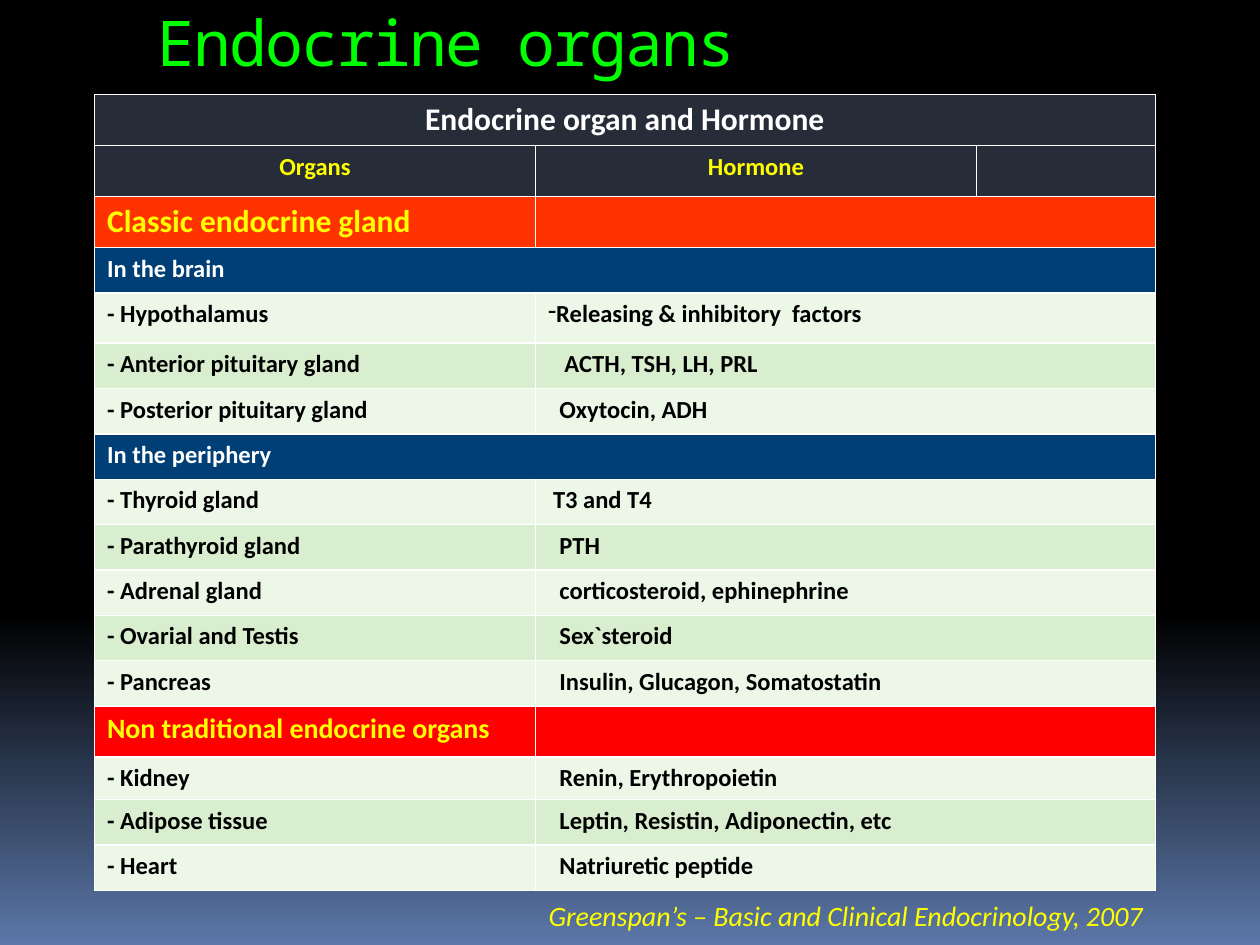
import pptx
import pptx.util
import pptx.dml.color
import pptx.enum.text
import lxml.etree

INK = {
    "black": "000000", "white": "FFFFFF", "lime": "00FF00", "gold": "FFFF00",
    "dusk": "5B77A8", "slate": "272D38", "flame": "FF3300", "red": "FF0000",
    "navy": "003F75", "pale": "ECF7E8", "mint": "D8EECE",
}
SIDE = {"l": pptx.enum.text.PP_ALIGN.LEFT, "c": pptx.enum.text.PP_ALIGN.CENTER,
        "r": pptx.enum.text.PP_ALIGN.RIGHT}
NS = "http://schemas.openxmlformats.org/drawingml/2006/main"
inch = pptx.util.Inches


def put(frame, text, size=14, ink="black", font="Calibri", bold=False,
        slant=False, side="l", pad=0.1, top=0.05, track=0, mark=None):
    frame.word_wrap = True
    frame.margin_left, frame.margin_top = inch(pad), inch(top)
    para = frame.paragraphs[0]
    para.alignment = SIDE[side]
    para.font.size = pptx.util.Pt(size)
    if mark:
        props = para._p.get_or_add_pPr()
        lxml.etree.SubElement(props, f"{{{NS}}}buChar", char=mark)
    if text:
        run = para.add_run()
        run.text = text
        face = run.font
        face.name, face.size = font, pptx.util.Pt(size)
        face.bold, face.italic = bold, slant
        face.color.rgb = pptx.dml.color.RGBColor.from_string(INK[ink])
        if track:
            run._r.get_or_add_rPr().set("spc", str(track * 100))


deck = pptx.Presentation()
W, H = inch(10), inch(7.5)
deck.slide_width, deck.slide_height = W, H
slide = deck.slides.add_slide(deck.slide_layouts[6])

fill = slide.background.fill
fill.gradient()
fill.gradient_angle = 270
stops = fill._fill._gradFill.gsLst
for stop in list(stops):
    stops.remove(stop)
for pos, ink in [(0, "black"), (65, "black"), (100, "dusk")]:
    stop = lxml.etree.SubElement(stops, f"{{{NS}}}gs", pos=str(pos * 1000))
    lxml.etree.SubElement(stop, f"{{{NS}}}srgbClr", val=INK[ink])

title = slide.shapes.add_textbox(int(W * 0.058), 0, int(W * 0.85), int(H * 0.07))
put(title.text_frame, "Endocrine organs", size=36, ink="lime",
    font="Noto Sans Mono", pad=0.67, top=0.03, track=-1)

KINDS = {
    "head": dict(fill="slate", size=18, ink="white", side="c", tall=0.405),
    "cols": dict(fill="slate", ink="gold", side="c", tall=0.405),
    "main": dict(fill="flame", size=18, ink="gold", tall=0.405),
    "next": dict(fill="red", size=16, ink="gold", tall=0.405),
    "part": dict(fill="navy", ink="white", tall=0.36),
    "gland": dict(tall=0.36),
}
ROWS = [
    ("head", "Endocrine organ and Hormone", "", {}),
    ("cols", "Organs", "Hormone", {}),
    ("main", "Classic endocrine gland", "", {}),
    ("part", "In the brain", "", {}),
    ("gland", "- Hypothalamus", "Releasing & inhibitory  factors", dict(tall=0.4, pad=0.1, mark="-")),
    ("gland", "- Anterior pituitary gland", "ACTH, TSH, LH, PRL", dict(pad=0.23)),
    ("gland", "- Posterior pituitary gland", "Oxytocin, ADH", {}),
    ("part", "In the periphery", "", {}),
    ("gland", "- Thyroid gland", "T3 and T4", dict(pad=0.14)),
    ("gland", "- Parathyroid gland", "PTH", {}),
    ("gland", "- Adrenal gland", "corticosteroid, ephinephrine", {}),
    ("gland", "- Ovarial and Testis", "Sex`steroid", {}),
    ("gland", "- Pancreas", "Insulin, Glucagon, Somatostatin", {}),
    ("next", "Non traditional endocrine organs", "", {}),
    ("gland", "- Kidney", "Renin, Erythropoietin", dict(tall=0.34)),
    ("gland", "- Adipose tissue", "Leptin, Resistin, Adiponectin, etc", {}),
    ("gland", "- Heart", "Natriuretic peptide", {}),
]
WIDE = [3.5, 3.5, 1.42]

grid = slide.shapes.add_table(len(ROWS), len(WIDE), int(W * 0.075), int(H * 0.1),
                              inch(sum(WIDE)), inch(6.3)).table
for col, wide in zip(grid.columns, WIDE):
    col.width = inch(wide)

band = 0
for row, (kind, left, right, more) in enumerate(ROWS):
    look = {**KINDS[kind]}
    tall = more.get("tall", look.pop("tall"))
    grid.rows[row].height = inch(tall)
    band = band + 1 if kind == "gland" else 0
    shade = look.pop("fill", "pale" if band % 2 else "mint")
    hint = {key: val for key, val in more.items() if key != "tall"}
    if kind == "gland":
        hint.setdefault("pad", 0.19)
    for num, text in enumerate([left, right, ""]):
        cell = grid.cell(row, num)
        cell.fill.solid()
        cell.fill.fore_color.rgb = pptx.dml.color.RGBColor.from_string(INK[shade])
        form = {**look, **hint} if num == 1 else look
        put(cell.text_frame, text, bold=True, **{**form, "pad": 0.1})
        cell.margin_left = inch(form.get("pad", 0.1))
        cell.margin_top = inch(0.05)
        props = cell._tc.get_or_add_tcPr()
        for spot, edge in enumerate(["lnL", "lnR", "lnT", "lnB"]):
            line = lxml.etree.Element(f"{{{NS}}}{edge}", w="12700")
            paint = lxml.etree.SubElement(line, f"{{{NS}}}solidFill")
            lxml.etree.SubElement(paint, f"{{{NS}}}srgbClr", val=INK["white"])
            props.insert(spot, line)
    if kind in ("head", "part"):
        grid.cell(row, 0).merge(grid.cell(row, 2))
    elif kind != "cols":
        grid.cell(row, 1).merge(grid.cell(row, 2))

source = slide.shapes.add_textbox(int(W * 0.2), int(H * 0.944), int(W * 0.717), int(H * 0.049))
put(source.text_frame, "Greenspan’s – Basic and Clinical Endocrinology, 2007",
    size=16, ink="gold", slant=True, side="r")
source.text_frame.auto_size = pptx.enum.text.MSO_AUTO_SIZE.SHAPE_TO_FIT_TEXT

deck.save("out.pptx")
